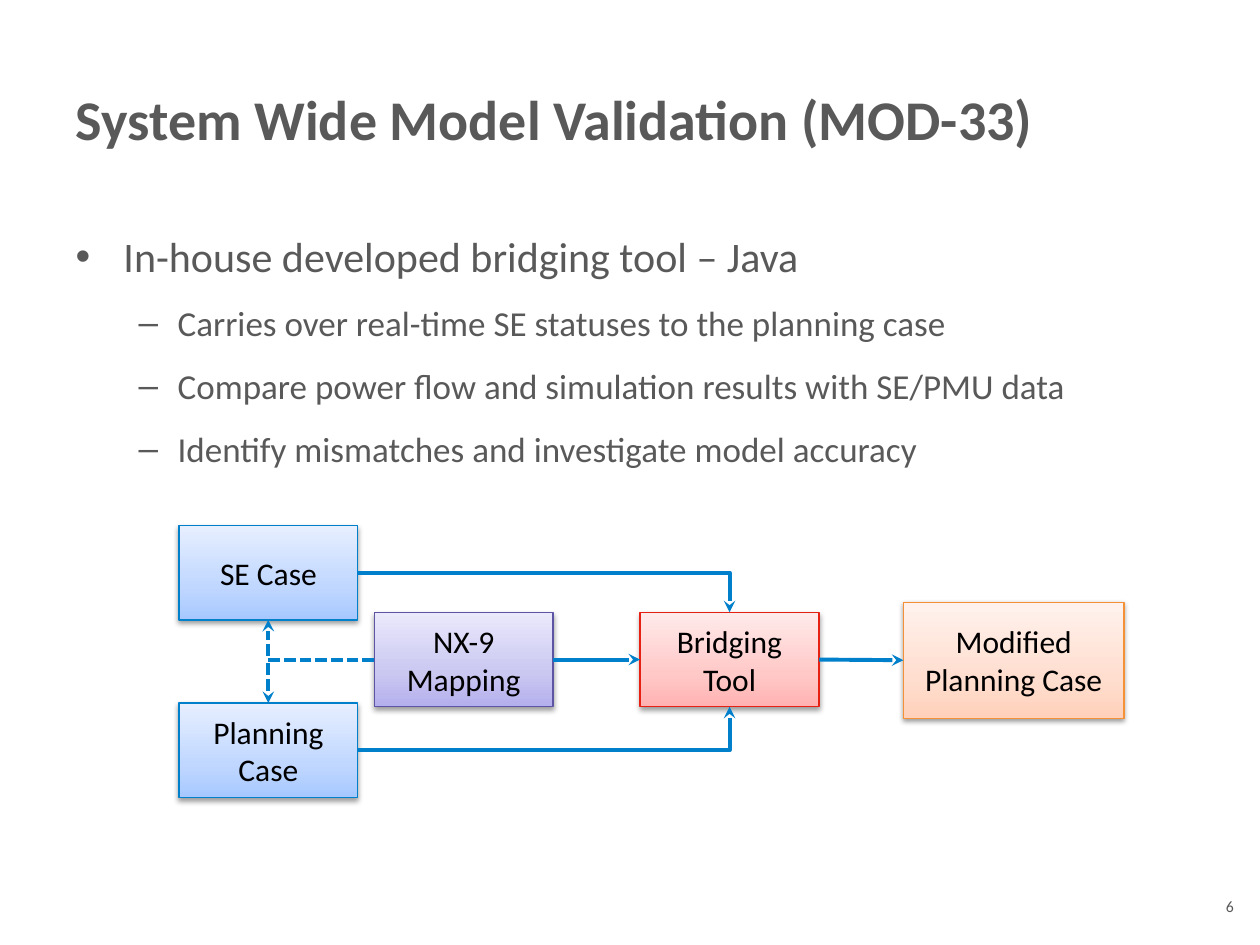
from copy import deepcopy

from lxml.etree import SubElement
from pptx import Presentation
from pptx.dml.color import RGBColor
from pptx.enum.dml import MSO_LINE
from pptx.enum.shapes import MSO_CONNECTOR as Connector, MSO_SHAPE as Shape
from pptx.enum.text import MSO_ANCHOR as Anchor, MSO_AUTO_SIZE as AutoSize, PP_ALIGN as Align
from pptx.oxml.ns import qn
from pptx.util import Inches, Pt

GREY, BLUE, BLACK = "595959", "007FCA", "000000"
TOP, LEFT, BOTTOM, RIGHT = range(4)

# Outline colour, then gradient colours from bottom to top
BLUE_STYLE = (BLUE, ["A6C8FF", "C0D7FF", "E7EFFF"])
PURPLE_STYLE = ("5D55A4", ["B4AFED", "CAC7F1", "EAE9FB"])
RED_STYLE = ("E72014", ["FFB2B1", "FFC9C8", "FFEAEA"])
ORANGE_STYLE = ("F49136", ["FFD1BB", "FFDECF", "FFF2ED"])

BULLETS = [
    (0, "In-house developed bridging tool – Java"),
    (1, "Carries over real-time SE statuses to the planning case"),
    (1, "Compare power flow and simulation results with SE/PMU data"),
    (1, "Identify mismatches and investigate model accuracy"),
]
# Bullet character, text indent, hanging indent and size for each level
LEVELS = [("•", 0.38, -0.38, 24), ("–", 0.81, -0.31, 20)]


def color(hex_value):
    return RGBColor.from_string(hex_value)


def place(shape, left, top, width, height):
    shape.left, shape.top = Inches(left), Inches(top)
    shape.width, shape.height = Inches(width), Inches(height)


def write(paragraph, text, size, fill=GREY, bold=False, align=Align.LEFT):
    paragraph.text = text
    paragraph.alignment = align
    font = paragraph.font
    font.name, font.size, font.bold = "Calibri", Pt(size), bold
    font.color.rgb = color(fill)


def add_bullets(frame):
    frame.auto_size = AutoSize.NONE
    for index, (level, text) in enumerate(BULLETS):
        paragraph = frame.add_paragraph() if index else frame.paragraphs[0]
        bullet, indent, hanging, size = LEVELS[level]
        properties = paragraph._p.get_or_add_pPr()
        properties.set("marL", str(Inches(indent)))
        properties.set("indent", str(Inches(hanging)))
        SubElement(properties, qn("a:buChar"), char=bullet)
        paragraph.level = level
        paragraph.line_spacing = 1.5
        paragraph.space_before = Pt(0)
        write(paragraph, text, size)


def fill_gradient(shape, colors):
    shape.fill.gradient()
    shape.fill.gradient_angle = 90
    stop_list = shape._element.spPr.find(qn("a:gradFill")).find(qn("a:gsLst"))
    stop_list.append(deepcopy(stop_list[-1]))
    stops = shape.fill.gradient_stops
    for stop, position, hex_value in zip(stops, (0, 0.35, 1), colors):
        stop.position = position
        stop.color.rgb = color(hex_value)


def add_shadow(shape):
    shape.shadow.inherit = False
    effects = shape._element.spPr.find(qn("a:effectLst"))
    shadow = SubElement(effects, qn("a:outerShdw"), blurRad=str(Pt(3.1)),
                        dist=str(Pt(1.6)), dir="5400000", rotWithShape="0")
    shade = SubElement(shadow, qn("a:srgbClr"), val=BLACK)
    SubElement(shade, qn("a:alpha"), val="38000")


def add_box(slide, text, left, top, style, width=1.42, height=0.75):
    outline, colors = style
    shape = slide.shapes.add_shape(Shape.RECTANGLE, Inches(left), Inches(top),
                                   Inches(width), Inches(height))
    fill_gradient(shape, colors)
    shape.line.color.rgb = color(outline)
    shape.line.width = Pt(0.75)
    add_shadow(shape)
    frame = shape.text_frame
    frame.word_wrap = True
    frame.vertical_anchor = Anchor.MIDDLE
    write(frame.paragraphs[0], text, 18, fill=BLACK, align=Align.CENTER)
    return shape


def add_arrow(slide, start, start_side, end, end_side, bent=False, dashed=False):
    kind = Connector.ELBOW if bent else Connector.STRAIGHT
    arrow = slide.shapes.add_connector(kind, 0, 0, 0, 0)
    arrow.begin_connect(start, start_side)
    arrow.end_connect(end, end_side)
    arrow.line.color.rgb = color(BLUE)
    arrow.line.width = Pt(2.25)
    if dashed:
        arrow.line.dash_style = MSO_LINE.SQUARE_DOT
    properties = arrow._element.spPr
    if bent:  # a single corner
        properties.find(qn("a:prstGeom")).set("prst", "bentConnector2")
    SubElement(properties.find(qn("a:ln")), qn("a:tailEnd"), type="stealth")
    SubElement(properties, qn("a:effectLst"))


def add_page_number(slide, number):
    box = slide.shapes.add_textbox(Inches(9.59), Inches(7.05), Inches(0.34), Inches(0.29))
    frame = box.text_frame
    frame.word_wrap = True
    frame.vertical_anchor = Anchor.MIDDLE
    frame.margin_left = frame.margin_right = frame.margin_top = frame.margin_bottom = 0
    write(frame.paragraphs[0], number, 9, align=Align.CENTER)


def add_diagram(slide):
    # Boxes
    bridging = add_box(slide, "Bridging Tool", 5.08, 4.86, RED_STYLE)
    mapping = add_box(slide, "NX-9 Mapping", 2.97, 4.86, PURPLE_STYLE)
    se_case = add_box(slide, "SE Case", 1.42, 4.17, BLUE_STYLE)
    planning = add_box(slide, "Planning Case", 1.42, 5.58, BLUE_STYLE)
    modified = add_box(slide, "Modified Planning Case", 7.17, 4.78, ORANGE_STYLE,
                       width=1.75, height=0.92)

    # Flow into and out of the bridging tool
    add_arrow(slide, se_case, RIGHT, bridging, TOP, bent=True)
    add_arrow(slide, planning, RIGHT, bridging, BOTTOM, bent=True)
    add_arrow(slide, mapping, RIGHT, bridging, LEFT)
    add_arrow(slide, bridging, RIGHT, modified, LEFT)

    # Mapping between the two cases
    add_arrow(slide, mapping, LEFT, se_case, BOTTOM, bent=True, dashed=True)
    add_arrow(slide, mapping, LEFT, planning, TOP, bent=True, dashed=True)


def main():
    presentation = Presentation()
    presentation.slide_width, presentation.slide_height = Inches(10), Inches(7.5)
    slide = presentation.slides.add_slide(presentation.slide_layouts[1])

    # Title and list
    title, body = slide.shapes.title, slide.placeholders[1]
    place(title, 0.5, 0.3, 9, 1.28)
    title.text_frame.auto_size = AutoSize.NONE
    title.text_frame.vertical_anchor = Anchor.MIDDLE
    write(title.text_frame.paragraphs[0], "System Wide Model Validation (MOD-33)", 32, bold=True)
    place(body, 0.5, 1.58, 9, 5)
    add_bullets(body.text_frame)

    add_page_number(slide, "6")
    add_diagram(slide)
    presentation.save("out.pptx")


if __name__ == "__main__":
    main()
